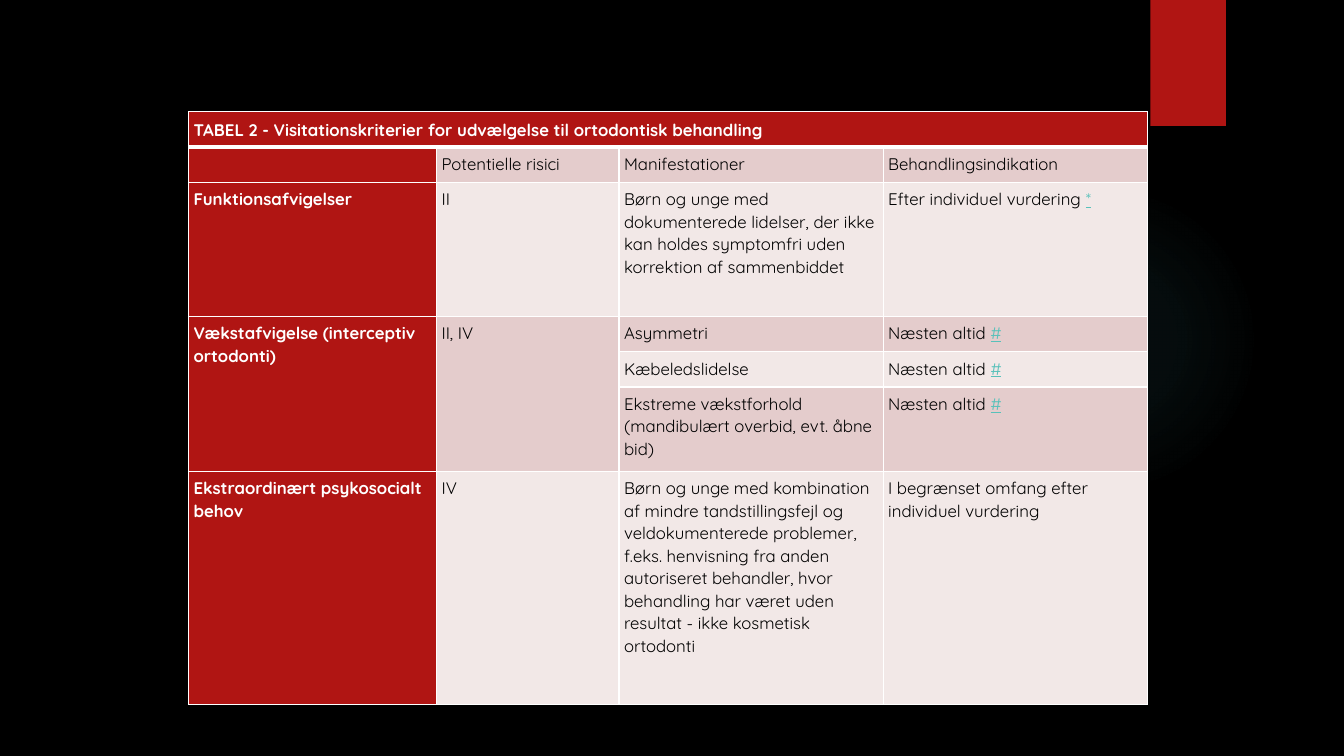
import pptx
import pptx.util
import pptx.dml.color
import pptx.enum.shapes
import pptx.enum.text
import pptx.oxml
import pptx.oxml.ns
from lxml import etree
from pptx.util import Inches

FONT = "Quicksand"
RED, ROSE, PALE = "B01513", "E4CCCC", "F2E8E7"
WHITE, BLACK, TEAL, GLOW = "FFFFFF", "000000", "58C1BA", "50B9C1"
COLS = [2.46, 1.81, 2.62, 2.62]
ROWS = [0.35, 0.35, 1.33, 0.35, 0.35, 0.84, 2.31]
TITLE = "TABEL 2 - Visitationskriterier for udvælgelse til ortodontisk behandling"

# Row by row; a tuple holds text and its reference mark, None is a merged cell
BODY = [
    ["", "Potentielle risici", "Manifestationer", "Behandlingsindikation"],
    ["Funktionsafvigelser", "II",
     "Børn og unge med dokumenterede lidelser, der ikke kan holdes "
     "symptomfri uden korrektion af sammenbiddet",
     ("Efter individuel vurdering ", "*")],
    ["Vækstafvigelse (interceptiv ortodonti)", "II, IV", "Asymmetri",
     ("Næsten altid ", "#")],
    [None, None, "Kæbeledslidelse", ("Næsten altid ", "#")],
    [None, None, "Ekstreme vækstforhold (mandibulært overbid, evt. åbne bid)",
     ("Næsten altid ", "#")],
    ["Ekstraordinært psykosocialt behov", "IV",
     "Børn og unge med kombination af mindre tandstillingsfejl og "
     "veldokumenterede problemer, f.eks. henvisning fra anden autoriseret "
     "behandler, hvor behandling har været uden resultat - ikke kosmetisk "
     "ortodonti",
     "I begrænset omfang efter individuel vurdering"],
]


def paint(fill, color):
    fill.solid()
    fill.fore_color.rgb = pptx.dml.color.RGBColor.from_string(color)


def add_shape(slide, kind, left, top, width, height, color):
    shape = slide.shapes.add_shape(
        kind, Inches(left), Inches(top), Inches(width), Inches(height))
    shape.shadow.inherit = False
    shape.line.fill.background()
    paint(shape.fill, color)
    return shape


def add_glow(slide):
    shape = add_shape(slide, pptx.enum.shapes.MSO_SHAPE.OVAL,
                      9.41, 1.83, 3.08, 3.08, GLOW)
    stops = "".join(
        f'<a:gs pos="{pos}000"><a:srgbClr val="{GLOW}">'
        f'<a:alpha val="{alpha}000"/></a:srgbClr></a:gs>'
        for pos, alpha in [(0, 7), (36, 6), (69, 0), (100, 0)])
    grad = pptx.oxml.parse_xml(
        f'<a:gradFill {pptx.oxml.ns.nsdecls("a")}><a:gsLst>{stops}</a:gsLst>'
        '<a:path path="circle"><a:fillToRect l="50000" t="50000" '
        'r="50000" b="50000"/></a:path></a:gradFill>')
    props = shape.fill._xPr
    props.replace(props.find(pptx.oxml.ns.qn("a:solidFill")), grad)


def add_run(par, text, color, bold=False, line=False):
    run = par.add_run()
    run.text = text
    font = run.font
    font.name, font.size = FONT, pptx.util.Pt(12)
    font.bold, font.underline = bold, line
    paint(font.fill, color)


def set_edges(cell, top, bottom):
    props = cell._tc.get_or_add_tcPr()
    for spot, (side, width) in enumerate(
            [("L", 1), ("R", 1), ("T", top), ("B", bottom)]):
        props.insert(spot, pptx.oxml.parse_xml(
            f'<a:ln{side} {pptx.oxml.ns.nsdecls("a")} '
            f'w="{pptx.util.Pt(width)}"><a:solidFill>'
            f'<a:srgbClr val="{WHITE}"/></a:solidFill></a:ln{side}>'))


def fill_cell(cell, text, color, head):
    paint(cell.fill, color)
    cell.margin_left = cell.margin_right = Inches(0.05)
    cell.margin_top = cell.margin_bottom = Inches(0.05)
    par = cell.text_frame.paragraphs[0]
    par.line_spacing = 1.07
    text, mark = text if isinstance(text, tuple) else (text, "")
    if text:
        add_run(par, text, WHITE if head else BLACK, bold=head)
    else:
        etree.SubElement(par._p, pptx.oxml.ns.qn("a:endParaRPr"), sz="1200")
    if mark:
        add_run(par, mark, TEAL, line=True)


def add_grid(slide):
    table = slide.shapes.add_table(
        len(ROWS), len(COLS), Inches(1.87), Inches(1.11),
        Inches(sum(COLS)), Inches(sum(ROWS))).table
    for col, width in zip(table.columns, COLS):
        col.width = Inches(width)
    for row, height in zip(table.rows, ROWS):
        row.height = Inches(height)

    # Title row and the two tall cells
    table.cell(0, 0).merge(table.cell(0, 3))
    for c in (0, 1):
        table.cell(3, c).merge(table.cell(5, c))

    # Text and banded fills
    cells = [[TITLE, None, None, None]] + BODY
    for r, row in enumerate(cells):
        band = ROSE if r % 2 else PALE
        for c, text in enumerate(row):
            cell = table.cell(r, c)
            head = r == 0 or c == 0
            if text is not None:
                fill_cell(cell, text, RED if head else band, head)
            set_edges(cell, 3 if r == 1 else 1, 3 if r == 0 else 1)
    table.cell(0, 0).vertical_anchor = pptx.enum.text.MSO_ANCHOR.MIDDLE


def main():
    deck = pptx.Presentation()
    deck.slide_width, deck.slide_height = Inches(13.33), Inches(7.5)
    slide = deck.slides.add_slide(deck.slide_layouts[6])
    paint(slide.background.fill, BLACK)

    # Backdrop
    add_glow(slide)
    add_shape(slide, pptx.enum.shapes.MSO_SHAPE.RECTANGLE,
              11.41, 0, 0.75, 1.25, RED)

    # Criteria
    add_grid(slide)
    deck.save("out.pptx")


if __name__ == "__main__":
    main()
